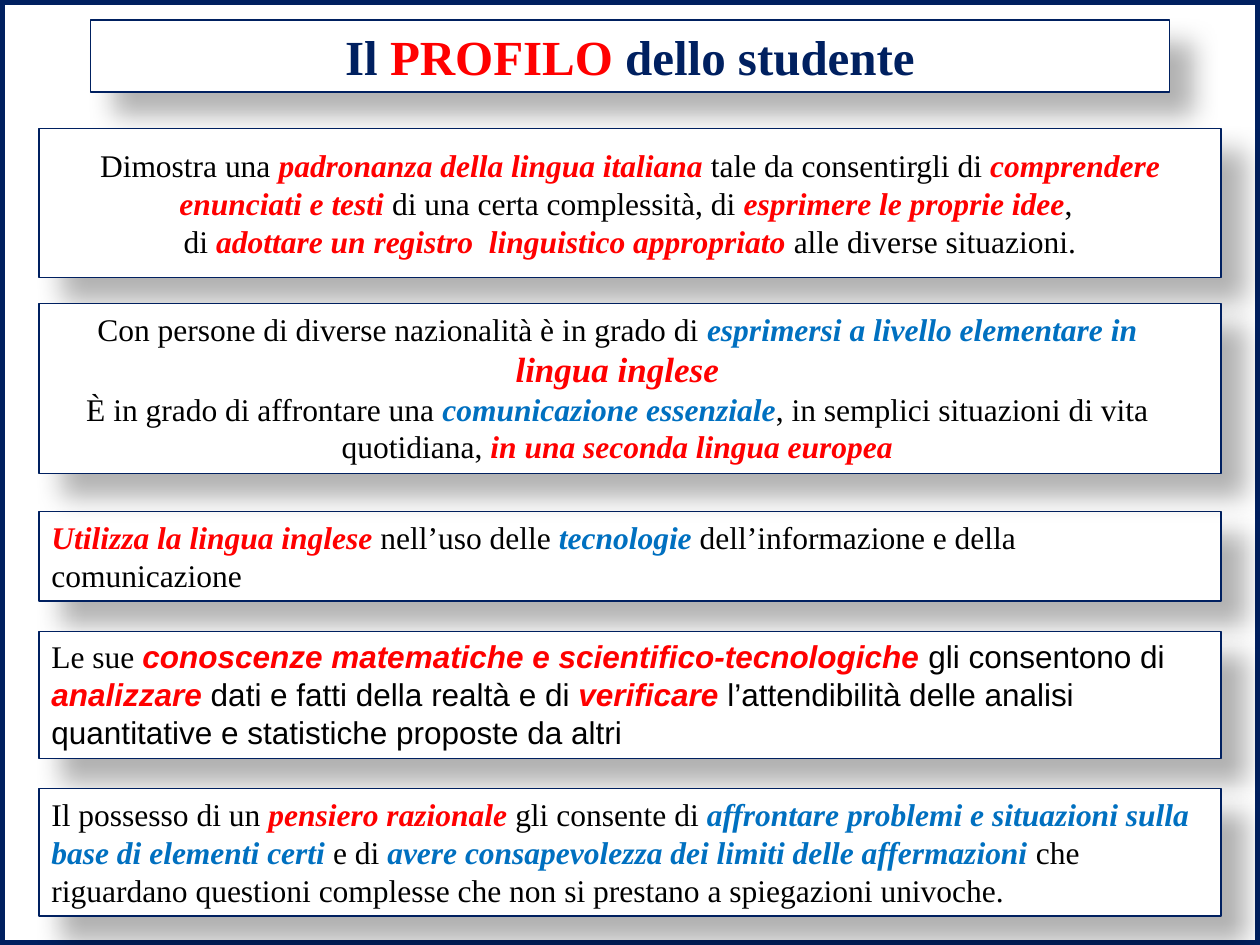
import pptx
import pptx.util
import pptx.dml.color
import pptx.enum.shapes
import pptx.enum.text
import pptx.oxml
import pptx.oxml.ns

Inches, Pt = pptx.util.Inches, pptx.util.Pt
RGBColor = pptx.dml.color.RGBColor
Align = pptx.enum.text.PP_ALIGN
Anchor = pptx.enum.text.MSO_ANCHOR

NAVY = RGBColor(0x00, 0x20, 0x60)
RED = RGBColor(0xFF, 0x00, 0x00)
BLUE = RGBColor(0x00, 0x70, 0xC0)
BLACK = RGBColor(0x00, 0x00, 0x00)
WHITE = RGBColor(0xFF, 0xFF, 0xFF)
SERIF, SANS = "Times New Roman", "Arial"

# style: (colour, bold, italic, size, font)
STYLES = {
    "title": (NAVY, True, False, 28, SERIF),
    "title red": (RED, True, False, 28, SERIF),
    "plain": (BLACK, False, False, 18, SERIF),
    "red": (RED, True, True, 18, SERIF),
    "large red": (RED, True, True, 20, SERIF),
    "blue": (BLUE, True, True, 18, SERIF),
    "sans": (BLACK, False, False, 18, SANS),
    "sans red": (RED, True, True, 18, SANS),
}

TITLE = [[("Il ", "title"), ("PROFILO ", "title red"), ("dello studente", "title")]]
ITALIAN = [
    [
        ("Dimostra una ", "plain"),
        ("padronanza della lingua italiana ", "red"),
        ("tale da consentirgli di ", "plain"),
        ("comprendere enunciati e testi ", "red"),
        ("di una certa complessità, di ", "plain"),
        ("esprimere le proprie idee", "red"),
        (", ", "plain"),
    ],
    [
        ("di ", "plain"),
        ("adottare un registro  linguistico appropriato ", "red"),
        ("alle diverse situazioni.", "plain"),
    ],
]
LANGUAGES = [
    [
        ("Con persone di diverse nazionalità è in grado di ", "plain"),
        ("esprimersi a livello elementare in ", "blue"),
        ("lingua inglese", "large red"),
    ],
    [
        ("È in grado di affrontare una ", "plain"),
        ("comunicazione essenziale", "blue"),
        (", in semplici situazioni di vita quotidiana,", "plain"),
        (" in una seconda lingua europea", "red"),
    ],
]
TECHNOLOGY = [[
    ("Utilizza la lingua inglese ", "red"),
    ("nell’uso delle ", "plain"),
    ("tecnologie", "blue"),
    (" dell’informazione e della comunicazione", "plain"),
]]
MATHEMATICS = [[
    ("Le sue ", "plain"),
    ("conoscenze matematiche e scientifico-tecnologiche ", "sans red"),
    ("gli consentono di ", "sans"),
    ("analizzare", "sans red"),
    (" dati e fatti della realtà e di ", "sans"),
    ("verificare", "sans red"),
    (" l’attendibilità delle analisi quantitative e statistiche proposte da altri", "sans"),
]]
REASONING = [[
    ("Il possesso di un ", "plain"),
    ("pensiero razionale ", "red"),
    ("gli consente di ", "plain"),
    ("affrontare problemi e situazioni sulla base di elementi certi ", "blue"),
    ("e di ", "plain"),
    ("avere consapevolezza dei limiti delle affermazioni ", "blue"),
    ("che riguardano questioni complesse che non si prestano a spiegazioni univoche.", "plain"),
]]

SLIDE_WIDTH, SLIDE_HEIGHT = 10, 7.5
TITLE_MARGIN, BOX_MARGIN = 0.72, 0.31
WRAP_INDENT = 0.2

# box: (side margin, top, height, alignment, anchor, paragraphs)
BOXES = [
    (TITLE_MARGIN, 0.16, 0.57, Align.CENTER, Anchor.TOP, TITLE),
    (BOX_MARGIN, 1.02, 1.18, Align.CENTER, Anchor.MIDDLE, ITALIAN),
    (BOX_MARGIN, 4.06, 0.71, Align.LEFT, Anchor.TOP, TECHNOLOGY),
    (BOX_MARGIN, 5.01, 1.01, Align.LEFT, Anchor.TOP, MATHEMATICS),
    (BOX_MARGIN, 2.41, 1.35, Align.CENTER, Anchor.TOP, LANGUAGES),
    (BOX_MARGIN, 6.26, 1.01, Align.LEFT, Anchor.TOP, REASONING),
]

SHADOW = (
    f'<a:effectLst {pptx.oxml.ns.nsdecls("a")}>'
    f'<a:outerShdw blurRad="{Pt(15)}" dist="{Pt(18)}" dir="{45 * 60000}" '
    'algn="tl" rotWithShape="0"><a:srgbClr val="000000">'
    '<a:alpha val="30000"/></a:srgbClr></a:outerShdw></a:effectLst>'
)


def add_rectangle(slide, left, top, width, height, line_width):
    shape = slide.shapes.add_shape(
        pptx.enum.shapes.MSO_SHAPE.RECTANGLE,
        Inches(left), Inches(top), Inches(width), Inches(height))
    shape.shadow.inherit = False
    shape.line.color.rgb = NAVY
    shape.line.width = Pt(line_width)
    return shape


def add_shadow(shape):
    properties = shape._element.spPr
    properties.remove(properties.find(pptx.oxml.ns.qn("a:effectLst")))
    properties.append(pptx.oxml.parse_xml(SHADOW))


def write_paragraph(paragraph, pieces, alignment):
    paragraph.alignment = alignment
    for text, style in pieces:
        run = paragraph.add_run()
        run.text = text
        font = run.font
        font.color.rgb, font.bold, font.italic, size, font.name = STYLES[style]
        font.size = Pt(size)


def add_box(slide, margin, top, height, alignment, anchor, paragraphs):
    shape = add_rectangle(slide, margin, top, SLIDE_WIDTH - 2 * margin, height, 0.75)
    shape.fill.solid()
    shape.fill.fore_color.rgb = WHITE
    add_shadow(shape)
    frame = shape.text_frame
    frame.word_wrap = True
    frame.vertical_anchor = anchor
    frame.auto_size = pptx.enum.text.MSO_AUTO_SIZE.SHAPE_TO_FIT_TEXT
    for index, pieces in enumerate(paragraphs):
        paragraph = frame.add_paragraph() if index else frame.paragraphs[0]
        write_paragraph(paragraph, pieces, alignment)
    return shape


def main():
    presentation = pptx.Presentation()
    presentation.slide_width = Inches(SLIDE_WIDTH)
    presentation.slide_height = Inches(SLIDE_HEIGHT)
    slide = presentation.slides.add_slide(presentation.slide_layouts[6])

    border = add_rectangle(slide, 0, 0, SLIDE_WIDTH, SLIDE_HEIGHT, 6)
    border.fill.background()
    for box in BOXES:
        shape = add_box(slide, *box)
        if box[-1] is LANGUAGES:
            first = shape.text_frame.paragraphs[0]
            first._p.get_or_add_pPr().set("marR", str(Inches(WRAP_INDENT)))
    presentation.save("out.pptx")


if __name__ == "__main__":
    main()
